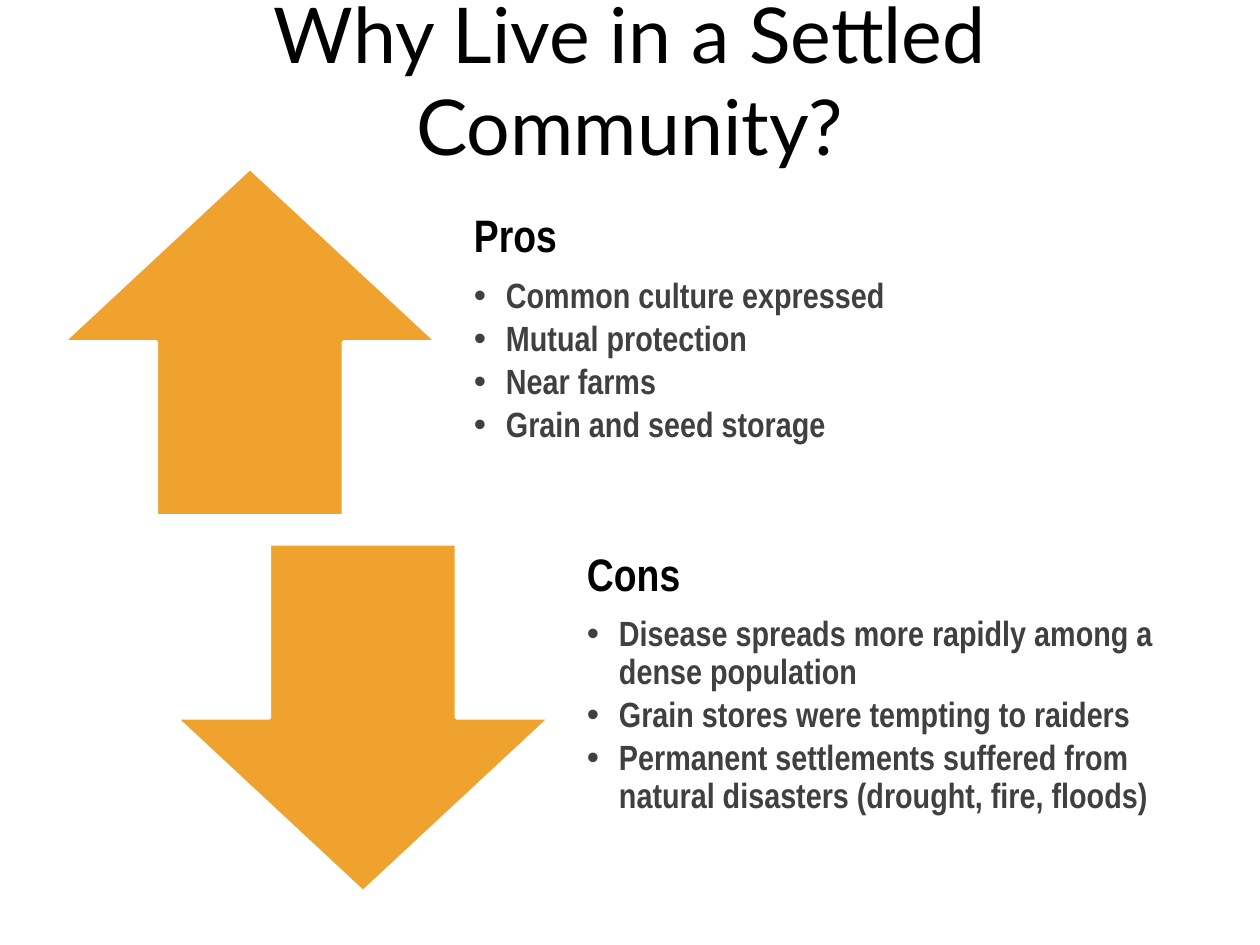
from lxml import etree
from pptx import Presentation
from pptx.dml.color import RGBColor
from pptx.enum.shapes import MSO_SHAPE
from pptx.enum.text import MSO_ANCHOR, MSO_AUTO_SIZE, PP_ALIGN
from pptx.oxml.ns import qn
from pptx.util import Pt

UP, DOWN = MSO_SHAPE.UP_ARROW, MSO_SHAPE.DOWN_ARROW
MIDDLE, LEFT, CENTER = MSO_ANCHOR.MIDDLE, PP_ALIGN.LEFT, PP_ALIGN.CENTER
NO_FIT = MSO_AUTO_SIZE.NONE
PX = 914400 // 126
COLORS = {"arrow": "F0A22E", "edge": "FFFFFF", "heading": "000000", "item": "404040"}

SIDES = [
    (UP, 25, "Pros", [
        "Common culture expressed",
        "Mutual protection",
        "Near farms",
        "Grain and seed storage",
    ]),
    (DOWN, 68, "Cons", [
        "Disease spreads more rapidly among a dense population",
        "Grain stores were tempting to raiders",
        "Permanent settlements suffered from natural disasters (drought, fire, floods)",
    ]),
]


def place(sp, x, y, w, h):
    sp.left, sp.top, sp.width, sp.height = x * PX, y * PX, w * PX, h * PX


def format_text(p, font, size, color, bold):
    for r in p.runs:
        r.font.name, r.font.size, r.font.bold = font, Pt(size), bold
        r.font.color.rgb = RGBColor.from_string(COLORS[color])


prs = Presentation()
prs.slide_width, prs.slide_height = 1260 * PX, 945 * PX
s = prs.slides.add_slide(prs.slide_layouts[3])

# Title
title = s.shapes.title
place(title, 63, 0, 1134, 158)
tf = title.text_frame
tf.text = "Why Live in a Settled Community?"
tf.auto_size, tf.vertical_anchor = NO_FIT, MIDDLE
tf.paragraphs[0].alignment = CENTER
format_text(tf.paragraphs[0], "Lato", 44, "heading", False)

# One arrow and one list per side, each stepped down and to the right
for i, (arrow_kind, bottom_inset, heading, items) in enumerate(SIDES):
    dx, y = 113 * i, 168 + 376 * i

    arrow = s.shapes.add_shape(arrow_kind, (63 + dx) * PX, y * PX, 374 * PX, 348 * PX)
    arrow.shadow.inherit = False
    arrow.fill.solid()
    arrow.fill.fore_color.rgb = RGBColor.from_string(COLORS["arrow"])
    arrow.line.color.rgb = RGBColor.from_string(COLORS["edge"])
    arrow.line.width = Pt(2)

    body = s.placeholders[i + 1]
    place(body, 449 + dx, y, 635, 348)
    tf = body.text_frame
    tf.text = "\n".join([heading] + items)
    tf.word_wrap, tf.auto_size, tf.vertical_anchor = True, NO_FIT, MIDDLE
    tf.margin_left = tf.margin_right = 25 * PX
    tf.margin_top, tf.margin_bottom = 0, bottom_inset * PX

    for n, p in enumerate(tf.paragraphs):
        is_item = n > 0
        p.level = int(is_item)
        p.alignment, p.line_spacing = LEFT, 0.9
        p.space_before, p.space_after = Pt(0), Pt(3 if is_item else 9)
        pPr = p._p.get_or_add_pPr()
        indent = 32 * PX if is_item else 0
        pPr.set("marL", str(indent))
        pPr.set("indent", str(-indent))
        if is_item:
            etree.SubElement(pPr, qn("a:buFont")).set("typeface", "Arial")
            etree.SubElement(pPr, qn("a:buChar")).set("char", "•")
            format_text(p, "Arial Narrow", 20, "item", True)
        else:
            etree.SubElement(pPr, qn("a:buNone"))
            format_text(p, "Arial Narrow", 26, "heading", True)

prs.save("out.pptx")
